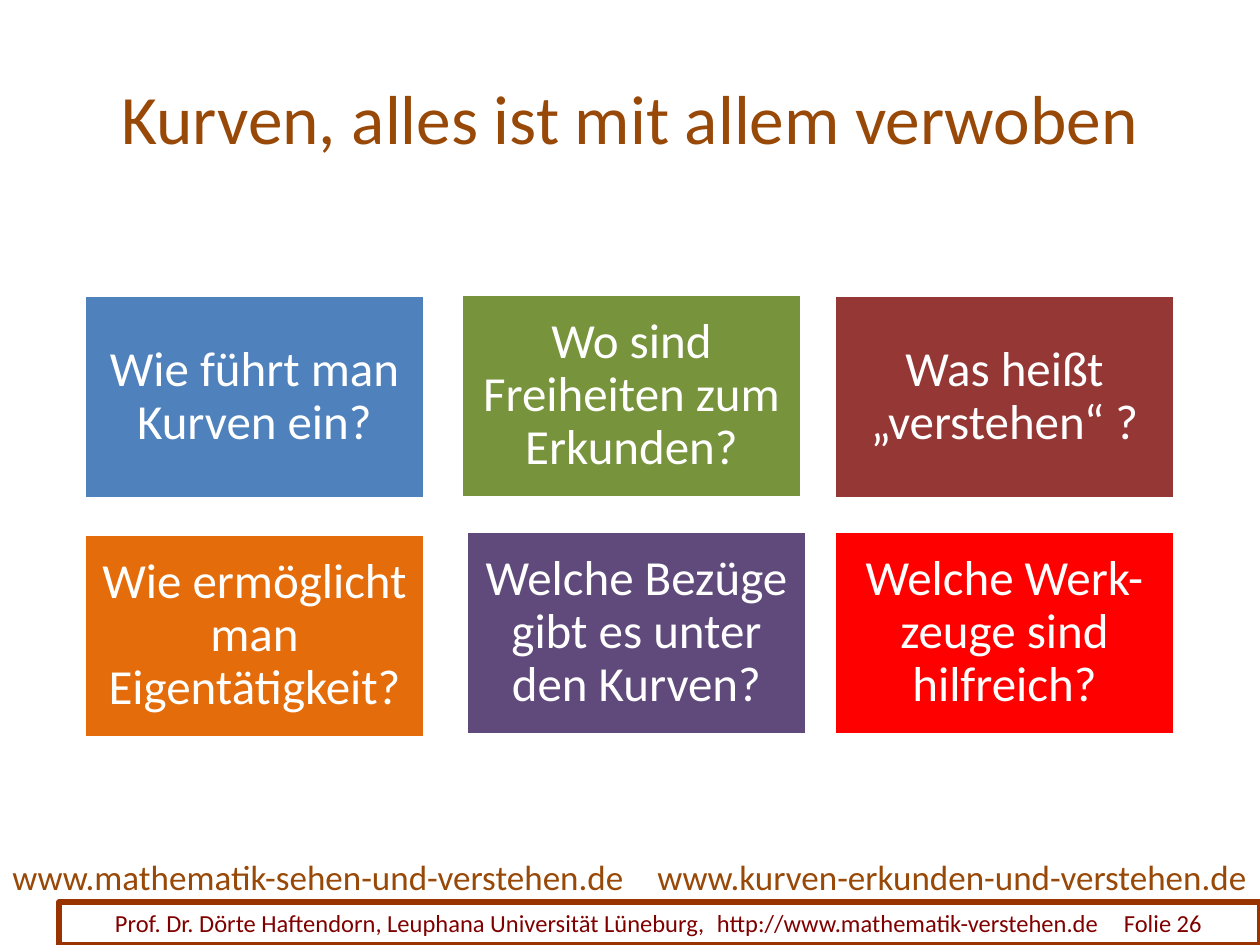
import pptx
import pptx.util
import pptx.dml.color
import pptx.enum.shapes
import pptx.enum.text
import pptx.oxml.ns
import lxml.etree

PX = 914400 // 126
RECTANGLE = pptx.enum.shapes.MSO_SHAPE.RECTANGLE
ALIGN = pptx.enum.text.PP_ALIGN
ANCHOR = pptx.enum.text.MSO_ANCHOR

COLOURS = {
    "brown": "984807", "frame": "993300", "maroon": "800000", "white": "FFFFFF",
    "blue": "4F81BD", "green": "77933C", "brick": "953735",
    "orange": "E46C0A", "purple": "604A7B", "red": "FF0000",
}

# Content: places are left, top, width, height in px
TITLE = ("Kurven, alles ist mit allem verwoben", (63, 38, 1134, 157))
ADDRESSES = [
    ("www.kurven-erkunden-und-verstehen.de", (645, 849, 615, 55)),
    ("www.mathematik-sehen-und-verstehen.de", (0, 849, 653, 55)),
]
FOOTER = ("Prof. Dr. Dörte Haftendorn, Leuphana Universität Lüneburg,"
          "\thttp://www.mathematik-verstehen.de\tFolie 26")
FOOTER_PLACE = (59, 902, 1201, 43)
FOOTER_TABS = (602, 1009)
CARD_SIZE = (341, 204)
CARDS = [  # question, colour, left and top
    ("Wie führt man Kurven ein?", "blue", (84, 295)),
    ("Wo sind Freiheiten zum Erkunden?", "green", (461, 294)),
    ("Was heißt „verstehen“ ?", "brick", (834, 295)),
    ("Wie ermöglicht man Eigentätigkeit?", "orange", (84, 534)),
    ("Welche Bezüge gibt es unter den Kurven?", "purple", (466, 531)),
    ("Welche Werk-zeuge sind hilfreich?", "red", (834, 531)),
]


def px(*lengths):
    return [length * PX for length in lengths]


def rgb(name):
    return pptx.dml.color.RGBColor.from_string(COLOURS[name])


def write(box, text, size, colour, align, tabs=(), spacing=None, **frame_format):
    frame = box.text_frame
    for name, value in {"word_wrap": True, **frame_format}.items():
        setattr(frame, name, value)
    para = frame.paragraphs[0]
    para.alignment = align
    if spacing:
        para.line_spacing = spacing
    if tabs:
        qn = pptx.oxml.ns.qn
        tab_list = lxml.etree.SubElement(para._p.get_or_add_pPr(), qn("a:tabLst"))
        for position in px(*tabs):
            lxml.etree.SubElement(tab_list, qn("a:tab"), pos=str(position), algn="l")
    span = para.add_run()
    span.text = text
    values = {"name": "Calibri", "size": pptx.util.Pt(size)}
    for name, value in values.items():
        setattr(span.font, name, value)
    span.font.color.rgb = rgb(colour)


def add_rectangle(page, place, line, width, fill=None):
    shape = page.shapes.add_shape(RECTANGLE, *px(*place))
    shape.shadow.inherit = False
    if fill:
        shape.fill.solid()
        shape.fill.fore_color.rgb = rgb(fill)
    else:
        shape.fill.background()
    shape.line.color.rgb = rgb(line)
    shape.line.width = pptx.util.Pt(width)
    return shape


deck = pptx.Presentation()
deck.slide_width, deck.slide_height = px(1260, 945)
page = deck.slides.add_slide(deck.slide_layouts[6])

# Title
text, place = TITLE
write(page.shapes.add_textbox(*px(*place)), text, 39.6, "brown", ALIGN.CENTER,
      vertical_anchor=ANCHOR.MIDDLE)

# Footer frame, its parts set apart by tabs
footer = add_rectangle(page, FOOTER_PLACE, "frame", 3)
write(footer, FOOTER, 14, "maroon", ALIGN.LEFT, FOOTER_TABS,
      margin_left=56 * PX, margin_right=0, vertical_anchor=ANCHOR.TOP)

# Web addresses
for text, place in ADDRESSES:
    write(page.shapes.add_textbox(*px(*place)), text, 20, "brown", ALIGN.LEFT,
          word_wrap=False)

# Question cards
margins = {f"margin_{side}": 15 * PX for side in ("left", "top", "right", "bottom")}
for text, colour, corner in CARDS:
    card = add_rectangle(page, corner + CARD_SIZE, "white", 2, colour)
    write(card, text, 28, "white", ALIGN.CENTER, spacing=0.9,
          vertical_anchor=ANCHOR.MIDDLE, **margins)

deck.save("out.pptx")
